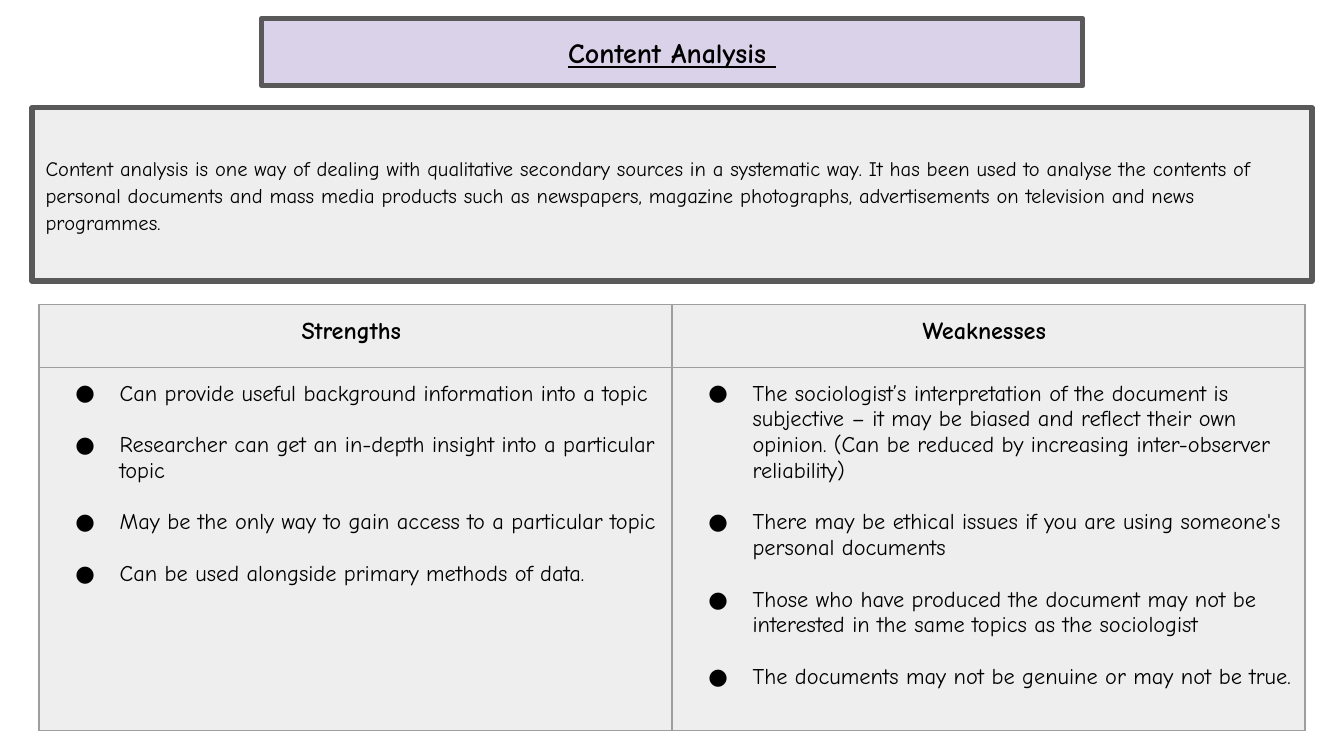
from typing import NamedTuple

from lxml.etree import SubElement
from pptx import Presentation
from pptx.dml.color import RGBColor as RGB
from pptx.enum.shapes import MSO_SHAPE
from pptx.enum.text import MSO_ANCHOR as Anchor, MSO_AUTO_SIZE as AutoSize, PP_ALIGN as Align
from pptx.oxml.ns import qn
from pptx.util import Emu, Inches, Pt

WIDTH = Inches(10)
HEIGHT = Emu(WIDTH * 9 // 16)
FONT = "Comic Neue"
COLORS = {"lilac": "D9D2E9", "grey": "EEEEEE", "frame": "595959",
          "grid": "9E9E9E", "text": "000000"}
INSET = Inches(0.1)
MARGINS = {f"margin_{side}": INSET for side in ("left", "right", "top", "bottom")}
FRAME = {**MARGINS, "word_wrap": True, "auto_size": AutoSize.NONE,
         "vertical_anchor": Anchor.MIDDLE}


class Box(NamedTuple):
    """Left, top, width and height in percent of the slide."""
    left: float
    top: float
    width: float
    height: float

    def emu(self) -> list[Emu]:
        return [Emu(round(share * size / 100))
                for share, size in zip(self, (WIDTH, HEIGHT, WIDTH, HEIGHT))]


class Column(NamedTuple):
    heading: str
    points: list[str]


TITLE_BOX = Box(19.46, 2.45, 61.1, 8.89)
INTRO_BOX = Box(2.4, 14.25, 95.2, 22.93)
TABLE_BOX = Box(2.9, 40.25, 94.2, 56.36)
ROW_HEIGHTS = (Inches(0.47), Inches(2.7))

INTRO = (
    "Content analysis is one way of dealing with qualitative secondary sources in a "
    "systematic way. It has been used to analyse the contents of personal documents and "
    "mass media products such as newspapers, magazine photographs, advertisements on "
    "television and news programmes."
)
COLUMNS = [
    Column("Strengths ", [
        "Can provide useful background information into a topic",
        "Researcher can get an in-depth insight into a particular topic",
        "May be the only way to gain access to a particular topic",
        "Can be used alongside primary methods of data.",
    ]),
    Column("Weaknesses ", [
        "The sociologist’s interpretation of the document is subjective – it may be biased "
        "and reflect their own opinion. (Can be reduced by increasing inter-observer "
        "reliability)",
        "There may be ethical issues if you are using someone's personal documents",
        "Those who have produced the document may not be interested in the same topics as "
        "the sociologist",
        "The documents may not be genuine or may not be true.",
    ]),
]


def apply(target, values: dict) -> None:
    for name, value in values.items():
        setattr(target, name, value)


def color(name: str) -> RGB:
    return RGB.from_string(COLORS[name])


def write(p, text: str, size: float, para: dict, **font) -> None:
    apply(p, para)
    r = p.add_run()
    r.text = text
    apply(r.font, {"name": FONT, "size": Pt(size), **font})
    r.font.color.rgb = color("text")


def frame(sp, fill: str) -> None:
    """Give a text shape its fill, thick outline and insets."""
    sp.fill.solid()
    sp.fill.fore_color.rgb = color(fill)
    sp.line.color.rgb = color("frame")
    sp.line.width = Pt(3)
    sp.shadow.inherit = False
    apply(sp.text_frame, FRAME)


def bullet(p) -> None:
    pPr = p._p.get_or_add_pPr()
    pPr.set("marL", str(Inches(0.5)))
    pPr.set("indent", str(Inches(-0.33)))
    SubElement(SubElement(pPr, qn("a:buClr")), qn("a:srgbClr"), val=COLORS["text"])
    SubElement(pPr, qn("a:buFont"), typeface=FONT)
    SubElement(pPr, qn("a:buChar"), char="●")


def style_cell(cell) -> None:
    tcPr = cell._tc.get_or_add_tcPr()
    for side in ("lnL", "lnR", "lnT", "lnB"):
        ln = SubElement(tcPr, qn(f"a:{side}"), w=str(Pt(0.75)))
        SubElement(SubElement(ln, qn("a:solidFill")), qn("a:srgbClr"), val=COLORS["grid"])
    cell.fill.solid()
    cell.fill.fore_color.rgb = color("grey")
    apply(cell, MARGINS)


def fill_column(table, index: int, column: Column) -> None:
    head, body = table.cell(0, index), table.cell(1, index)
    for cell in (head, body):
        style_cell(cell)
    write(head.text_frame.paragraphs[0], column.heading, 13,
          {"alignment": Align.CENTER}, bold=True)
    tf = body.text_frame
    for i, point in enumerate(column.points):
        p = tf.add_paragraph() if i else tf.paragraphs[0]
        write(p, point, 12, {"space_before": Pt(13.8 if i else 0)}, bold=False)
        bullet(p)


def main() -> None:
    prs = Presentation()
    apply(prs, {"slide_width": WIDTH, "slide_height": HEIGHT})
    s = prs.slides.add_slide(prs.slide_layouts[5])

    title = s.shapes.title
    apply(title, dict(zip(("left", "top", "width", "height"), TITLE_BOX.emu())))
    frame(title, "lilac")
    write(title.text_frame.paragraphs[0], "Content Analysis ", 15,
          {"alignment": Align.CENTER}, bold=True, underline=True)

    intro = s.shapes.add_shape(MSO_SHAPE.RECTANGLE, *INTRO_BOX.emu())
    frame(intro, "grey")
    write(intro.text_frame.paragraphs[0], INTRO, 11,
          {"alignment": Align.LEFT, "line_spacing": 1.08, "space_after": Pt(8)})

    table = s.shapes.add_table(len(ROW_HEIGHTS), len(COLUMNS), *TABLE_BOX.emu()).table
    apply(table, {"first_row": False, "horz_banding": False})
    for row, height in zip(table.rows, ROW_HEIGHTS):
        row.height = height
    for i, column in enumerate(COLUMNS):
        fill_column(table, i, column)

    prs.save("out.pptx")


if __name__ == "__main__":
    main()
